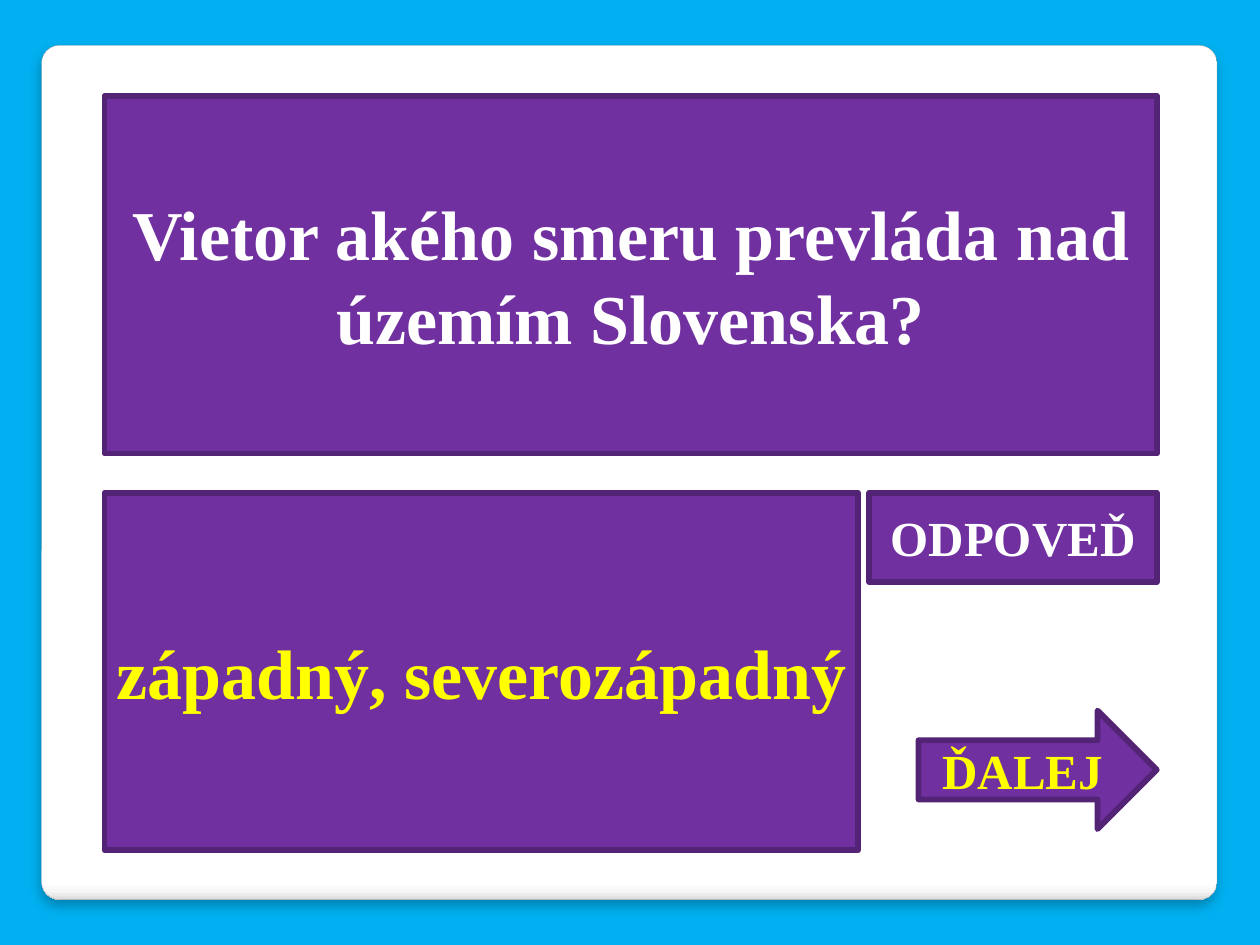
from dataclasses import dataclass

from lxml import etree
from pptx import Presentation
from pptx.dml.color import RGBColor
from pptx.enum.shapes import MSO_SHAPE
from pptx.enum.text import MSO_ANCHOR, MSO_AUTO_SIZE, PP_ALIGN
from pptx.oxml import parse_xml
from pptx.oxml.ns import nsdecls, qn
from pptx.shapes.autoshape import Shape
from pptx.slide import Slide
from pptx.util import Inches, Pt

RECTANGLE = MSO_SHAPE.RECTANGLE
ROUNDED = MSO_SHAPE.ROUNDED_RECTANGLE
ARROW = MSO_SHAPE.RIGHT_ARROW
MIDDLE = MSO_ANCHOR.MIDDLE
CENTER = PP_ALIGN.CENTER
NO_AUTOFIT = MSO_AUTO_SIZE.NONE

SLIDE_WIDTH, SLIDE_HEIGHT = 10, 7.5
FONT = "Times New Roman"
SKY, PURPLE, DARK_PURPLE = "00B0F0", "7030A0", "532476"
WHITE, YELLOW, GRAY = "FFFFFF", "FFFF00", "A4A4A4"
PANEL_STOPS = ((0, WHITE), (98, WHITE), (99, "F7F7F7"), (100, "DADADA"))

LEFT, RIGHT = 0.83, 9.18
QUESTION_TOP, ANSWER_TOP = 0.76, 3.91
BOX_HEIGHT = 2.84


@dataclass(frozen=True)
class Area:
    left: float
    top: float
    width: float
    height: float


@dataclass(frozen=True)
class Card:
    text: str
    area: Area
    size: int
    color: str
    kind: int = RECTANGLE


def area_to_right_edge(top: float, width: float, height: float) -> Area:
    return Area(RIGHT - width, top, width, height)


QUESTION = Card("Vietor akého smeru prevláda nad územím Slovenska?",
                Area(LEFT, QUESTION_TOP, RIGHT - LEFT, BOX_HEIGHT), 40, WHITE)
CARDS = (
    Card("západný, severozápadný",
         Area(LEFT, ANSWER_TOP, 5.98, BOX_HEIGHT), 40, YELLOW),
    Card("ODPOVEĎ", area_to_right_edge(ANSWER_TOP, 2.28, 0.71), 28, WHITE),
    Card("ĎALEJ", area_to_right_edge(5.64, 1.89, 0.94), 28, YELLOW, ARROW),
)


def rgb(value: str) -> RGBColor:
    return RGBColor.from_string(value)


def place(shape: Shape, area: Area) -> None:
    shape.left, shape.top = Inches(area.left), Inches(area.top)
    shape.width, shape.height = Inches(area.width), Inches(area.height)


def add_preset(slide: Slide, kind: int, area: Area) -> Shape:
    shape = slide.shapes.add_shape(kind, 0, 0, 0, 0)
    place(shape, area)
    return shape


def outline(shape: Shape, color: str, width: float) -> None:
    shape.line.color.rgb = rgb(color)
    shape.line.width = Pt(width)


def write_text(shape: Shape, text: str, *, size: int, color: str) -> None:
    frame = shape.text_frame
    frame.word_wrap = True
    frame.auto_size = NO_AUTOFIT
    frame.vertical_anchor = MIDDLE
    frame.margin_left = frame.margin_right = Inches(0.05)
    paragraph = frame.paragraphs[0]
    paragraph.alignment = CENTER
    run = paragraph.add_run()
    run.text = text
    run.font.name = FONT
    run.font.size = Pt(size)
    run.font.bold = True
    run.font.color.rgb = rgb(color)


def format_card(shape: Shape, card: Card) -> None:
    shape.shadow.inherit = False
    shape.fill.solid()
    shape.fill.fore_color.rgb = rgb(PURPLE)
    outline(shape, DARK_PURPLE, 3.35)
    write_text(shape, card.text, size=card.size, color=card.color)


def shade_panel(panel: Shape) -> None:
    panel.fill.gradient()
    panel.fill.gradient_angle = 270
    properties = panel.element.spPr
    stops = properties.find(qn("a:gradFill")).find(qn("a:gsLst"))
    for stop in list(stops):
        stops.remove(stop)
    for percent, color in PANEL_STOPS:
        stop = etree.SubElement(stops, qn("a:gs"), pos=str(percent * 1000))
        etree.SubElement(stop, qn("a:srgbClr"), val=color)
    panel.shadow.inherit = False
    properties.find(qn("a:effectLst")).append(parse_xml(
        f'<a:outerShdw {nsdecls("a")} blurRad="{Pt(6)}" dist="{Pt(4)}" '
        'dir="5400000" algn="t" rotWithShape="0"><a:srgbClr val="000000">'
        '<a:alpha val="25000"/></a:srgbClr></a:outerShdw>'))


def main() -> None:
    presentation = Presentation()
    presentation.slide_width = Inches(SLIDE_WIDTH)
    presentation.slide_height = Inches(SLIDE_HEIGHT)
    slide = presentation.slides.add_slide(presentation.slide_layouts[5])
    slide.background.fill.solid()
    slide.background.fill.fore_color.rgb = rgb(SKY)

    panel = add_preset(slide, ROUNDED, Area(0.33, 0.36, 9.33, 6.78))
    panel.adjustments[0] = 0.021
    outline(panel, GRAY, 0.16)
    shade_panel(panel)

    question = slide.shapes.title
    question.element.addprevious(panel.element)
    place(question, QUESTION.area)
    format_card(question, QUESTION)

    for card in CARDS:
        format_card(add_preset(slide, card.kind, card.area), card)
    presentation.save("out.pptx")


if __name__ == "__main__":
    main()
